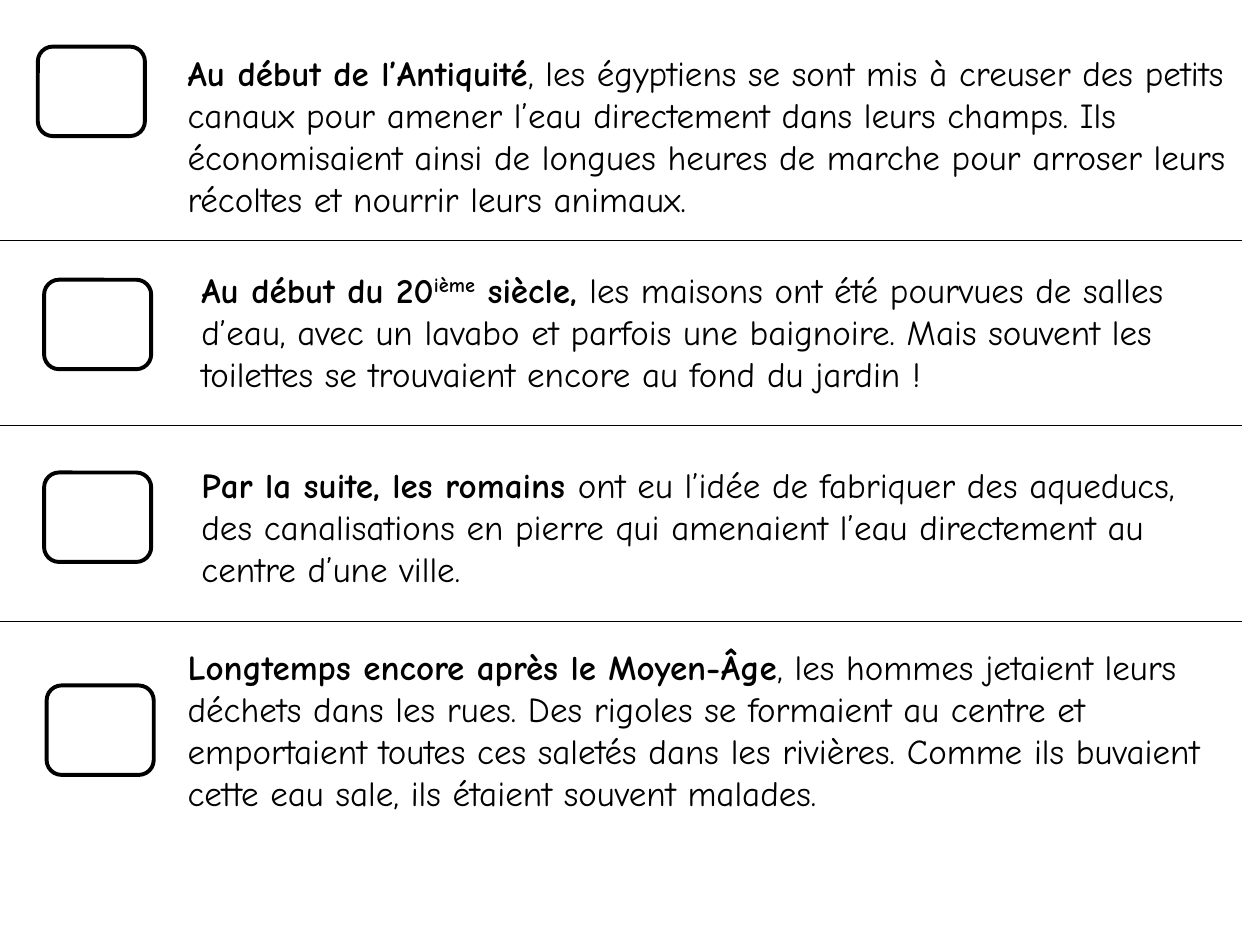
from dataclasses import dataclass

from lxml import etree
from pptx import Presentation
from pptx import util as u
from pptx.dml.color import RGBColor
from pptx.enum import shapes, text
from pptx.oxml.ns import qn

PX = 9144


@dataclass(frozen=True)
class Theme:
    """Colours, font and sizes of the worksheet."""
    ink: RGBColor = RGBColor(0, 0, 0)
    paper: RGBColor = RGBColor(255, 255, 255)
    font: str = "Comic Neue"
    size: u.Pt = u.Pt(20)
    frame: u.Pt = u.Pt(2.25)
    rule: u.Pt = u.Pt(0.5)


THEME = Theme()
BOLD, RAISED, PLAIN = "bold", "raised", "plain"

# Each period: text area, top-left of its answer box, styled wording.
PERIODS = [
    ((139, 36, 861, 145), (30, 37), [
        ("Au début de l’Antiquité", BOLD),
        (", les égyptiens se sont mis à creuser des petits canaux pour amener "
         "l’eau directement dans leurs champs. Ils économisaient ainsi de "
         "longues heures de marche pour arroser leurs récoltes et nourrir "
         "leurs animaux.", PLAIN)]),
    ((150, 208, 850, 111), (35, 222), [
        ("Au début du 20", BOLD), ("ième", RAISED), (" siècle, ", BOLD),
        ("les maisons ont été pourvues de salles d’eau, avec un lavabo et "
         "parfois une baignoire. Mais souvent les toilettes se trouvaient "
         "encore au fond du jardin !", PLAIN)]),
    ((150, 363, 818, 111), (35, 375), [
        ("Par la suite, les romains ", BOLD),
        ("ont eu l’idée de fabriquer des aqueducs, des canalisations en "
         "pierre qui amenaient l’eau directement au centre d’une ville.",
         PLAIN)]),
    ((139, 507, 868, 145), (37, 544), [
        ("Longtemps encore après le Moyen-Âge", BOLD),
        (", les hommes jetaient leurs déchets dans les rues. Des rigoles se "
         "formaient au centre et emportaient toutes ces saletés dans les "
         "rivières. Comme ils buvaient cette eau sale, ils étaient souvent "
         "malades.", PLAIN)]),
]
SEPARATORS = [191, 338, 493]


def px(*lengths):
    """Turn px lengths into EMU."""
    return [length * PX for length in lengths]


def add_description(page, area, wording):
    """Add one paragraph of styled spans."""
    box = page.shapes.add_textbox(*px(*area))
    frame = box.text_frame
    frame.word_wrap = True
    frame.auto_size = text.MSO_AUTO_SIZE.SHAPE_TO_FIT_TEXT
    para = frame.paragraphs[0]
    for words, style in wording:
        span = para.add_run()
        span.text = words
        span.font.name = THEME.font
        span.font.size = THEME.size
        span.font.bold = style != PLAIN
        span.font.color.rgb = THEME.ink
        if style == RAISED:
            span.font._element.set("baseline", "30000")


def add_answer_box(page, corner):
    """Add an empty rounded box for the order number."""
    box = page.shapes.add_shape(
        shapes.MSO_SHAPE.ROUNDED_RECTANGLE, *px(*corner, 85, 71))
    box.shadow.inherit = False
    box.fill.solid()
    box.fill.fore_color.rgb = THEME.paper
    box.line.color.rgb = THEME.ink
    box.line.width = THEME.frame


def add_separator(page, y):
    """Add a thin horizontal rule."""
    rule = page.shapes.add_connector(
        shapes.MSO_CONNECTOR.STRAIGHT, *px(0, y, 986, y))
    rule.line.color.rgb = THEME.ink
    rule.line.width = THEME.rule
    etree.SubElement(rule._element.spPr, qn("a:effectLst"))


def main():
    """Build and save the worksheet."""
    deck = Presentation()
    deck.slide_width, deck.slide_height = px(1000, 750)
    page = deck.slides.add_slide(deck.slide_layouts[6])
    for area, corner, wording in PERIODS:
        add_description(page, area, wording)
        add_answer_box(page, corner)
    for y in SEPARATORS:
        add_separator(page, y)
    deck.save("out.pptx")


if __name__ == "__main__":
    main()
